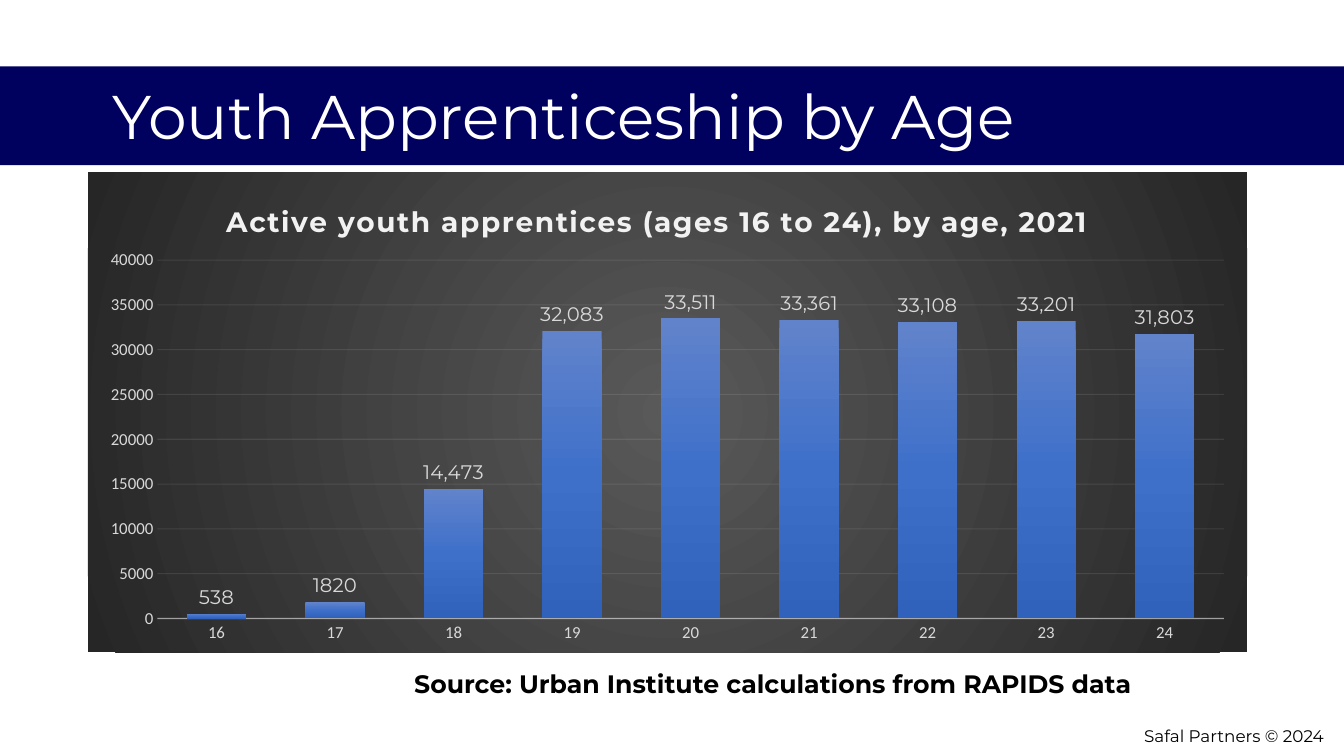
from dataclasses import dataclass

from lxml.etree import SubElement
from pptx import Presentation
from pptx.chart.data import CategoryChartData
from pptx.dml.color import RGBColor
from pptx.enum.chart import XL_CHART_TYPE, XL_LABEL_POSITION, XL_TICK_MARK
from pptx.enum.shapes import MSO_SHAPE
from pptx.enum.text import MSO_ANCHOR, MSO_AUTO_SIZE, PP_ALIGN
from pptx.oxml import parse_xml
from pptx.oxml.ns import nsdecls, qn
from pptx.util import Inches, Pt


@dataclass(frozen=True)
class Theme:
    heading_font: str = "Montserrat"
    axis_font: str = "Calibri"
    navy: str = "00015E"
    white: str = "FFFFFF"
    black: str = "000000"
    pale: str = "F2F2F2"
    grey: str = "D9D9D9"
    backdrop: tuple = ((0, "595959"), (100, "262626"))
    column: tuple = ((0, "6183CB"), (50, "3E70CA"), (100, "3062BB"))
    title_size: int = 44
    chart_title_size: int = 20
    source_size: int = 18
    label_size: int = 14
    small_size: int = 12


THEME = Theme()
APPRENTICES = {
    "16": 538, "17": 1820, "18": 14473, "19": 32083, "20": 33511,
    "21": 33361, "22": 33108, "23": 33201, "24": 31803,
}


def share(deck, left, top, width, height):
    """Turn percentages of the slide's size into a box."""
    return (
        int(deck.slide_width * left / 100), int(deck.slide_height * top / 100),
        int(deck.slide_width * width / 100), int(deck.slide_height * height / 100),
    )


def style_font(font, size, color, name=THEME.heading_font, bold=False):
    font.name, font.size, font.bold = name, Pt(size), bold
    font.color.rgb = RGBColor.from_string(color)


def gradient(stops, direction):
    stop_xml = "".join(
        f'<a:gs pos="{position * 1000}"><a:srgbClr val="{color}"/></a:gs>'
        for position, color in stops
    )
    return parse_xml(
        f'<a:gradFill {nsdecls("a")} rotWithShape="1">'
        f"<a:gsLst>{stop_xml}</a:gsLst>{direction}</a:gradFill>"
    )


def style_line(line, width, opacity):
    line.width = Pt(width)
    line.color.rgb = RGBColor.from_string(THEME.pale)
    color = line.fill._xPr.find(f".//{qn('a:srgbClr')}")
    SubElement(color, qn("a:alpha"), val=str(opacity * 1000))


def set_layout(parent, following, **shares):
    """Place a chart part by shares of the chart, ahead of the tag that follows."""
    for old in parent.findall(qn("c:layout")):
        parent.remove(old)
    modes = {"xMode": "edge", "yMode": "edge", **shares}
    if "w" in shares:
        modes = {"layoutTarget": "inner", **modes}
    entries = "".join(f'<c:{key} val="{value}"/>' for key, value in modes.items())
    layout = parse_xml(
        f'<c:layout {nsdecls("c")}><c:manualLayout>{entries}</c:manualLayout></c:layout>'
    )
    parent.find(qn(following)).addprevious(layout)


def add_title_band(page, band_box, title_box):
    band = page.shapes.add_shape(MSO_SHAPE.RECTANGLE, *band_box)
    band.shadow.inherit = False
    band.fill.solid()
    band.fill.fore_color.rgb = RGBColor.from_string(THEME.navy)
    band.line.fill.background()
    title = page.shapes.title
    title._element.addprevious(band._element)
    title.left, title.top, title.width, title.height = title_box
    frame = title.text_frame
    frame.text = "Youth Apprenticeship by Age"
    frame.auto_size = MSO_AUTO_SIZE.NONE
    frame.vertical_anchor = MSO_ANCHOR.MIDDLE
    paragraph = frame.paragraphs[0]
    paragraph.alignment = PP_ALIGN.LEFT
    paragraph.line_spacing = 0.9
    style_font(paragraph.runs[0].font, THEME.title_size, THEME.white)


def add_caption(page, box, text, size, bold=False,
                alignment=PP_ALIGN.LEFT, anchor=MSO_ANCHOR.TOP, spacing=1.0):
    frame = page.shapes.add_textbox(*box).text_frame
    frame.word_wrap = True
    frame.vertical_anchor = anchor
    frame.text = text
    paragraph = frame.paragraphs[0]
    paragraph.alignment = alignment
    paragraph.line_spacing = spacing
    style_font(paragraph.runs[0].font, size, THEME.black, bold=bold)


def add_chart_title(chart):
    frame = chart.chart_title.text_frame
    frame.text = "Active youth apprentices (ages 16 to 24), by age, 2021"
    span = frame.paragraphs[0].runs[0]
    style_font(span.font, THEME.chart_title_size, THEME.pale, bold=True)
    span._r.get_or_add_rPr().set("spc", "100")
    set_layout(chart.chart_title._element, "c:overlay", x=0.115, y=0.05)


def style_axes(chart):
    for axis in (chart.category_axis, chart.value_axis):
        axis.major_tick_mark = axis.minor_tick_mark = XL_TICK_MARK.NONE
        style_font(axis.tick_labels.font, THEME.small_size, THEME.grey, THEME.axis_font)
    style_line(chart.category_axis.format.line, 1, 54)
    values = chart.value_axis
    values.minimum_scale, values.maximum_scale, values.major_unit = 0, 40000, 5000
    values.tick_labels.number_format = "0"
    values.tick_labels.number_format_is_linked = False
    values.format.line.fill.background()
    style_line(values.major_gridlines.format.line, 0.75, 10)


def style_columns(plot):
    plot.gap_width, plot.overlap, plot.vary_by_categories = 100, -24, False
    series = plot.series[0]
    series._element.get_or_add_spPr().append(
        gradient(THEME.column, '<a:lin ang="5400000" scaled="0"/>')
    )
    labels = series.data_labels
    labels.show_value = True
    labels.number_format, labels.number_format_is_linked = "#,##0", False
    labels.position = XL_LABEL_POSITION.OUTSIDE_END
    style_font(labels.font, THEME.label_size, THEME.grey)
    plain_label = series.points[1].data_label
    plain_label.text_frame.text = "1820"
    plain_label.position = XL_LABEL_POSITION.OUTSIDE_END
    span = plain_label.text_frame.paragraphs[0].runs[0]
    style_font(span.font, THEME.label_size, THEME.grey)


def add_age_chart(page, box):
    data = CategoryChartData()
    data.categories = list(APPRENTICES)
    data.add_series("Series 1", list(APPRENTICES.values()))
    chart = page.shapes.add_chart(XL_CHART_TYPE.COLUMN_CLUSTERED, *box, data).chart
    chart.has_legend = False
    style_font(chart.font, 10, THEME.black, THEME.axis_font)
    add_chart_title(chart)
    style_axes(chart)
    style_columns(chart.plots[0])
    root = chart._chartSpace.find(qn("c:chart"))
    set_layout(root.find(qn("c:plotArea")), "c:barChart",
               x=0.06, y=0.183, w=0.92, h=0.747)
    backdrop = parse_xml(f'<c:spPr {nsdecls("c", "a")}><a:ln><a:noFill/></a:ln></c:spPr>')
    centre = '<a:path path="circle"><a:fillToRect l="50000" t="50000" r="50000" b="50000"/></a:path>'
    backdrop.insert(0, gradient(THEME.backdrop, centre))
    root.addnext(backdrop)


def main():
    deck = Presentation()
    deck.slide_width, deck.slide_height = Inches(13.33), Inches(7.5)
    page = deck.slides.add_slide(deck.slide_layouts[5])
    add_title_band(page, share(deck, 0, 8.8, 100, 13.07),
                   share(deck, 7.65, 6.13, 92.35, 19.33))
    add_caption(page, share(deck, 72.02, 94.67, 27.23, 5.33), "Safal Partners © 2024",
                THEME.small_size, alignment=PP_ALIGN.RIGHT, anchor=MSO_ANCHOR.MIDDLE)
    add_age_chart(page, share(deck, 6.53, 22.8, 86.27, 63.47))
    add_caption(page, share(deck, 30.08, 88.13, 55.29, 5.33),
                "Source: Urban Institute calculations from RAPIDS data",
                THEME.source_size, bold=True, spacing=0.9)
    deck.save("out.pptx")


if __name__ == "__main__":
    main()
